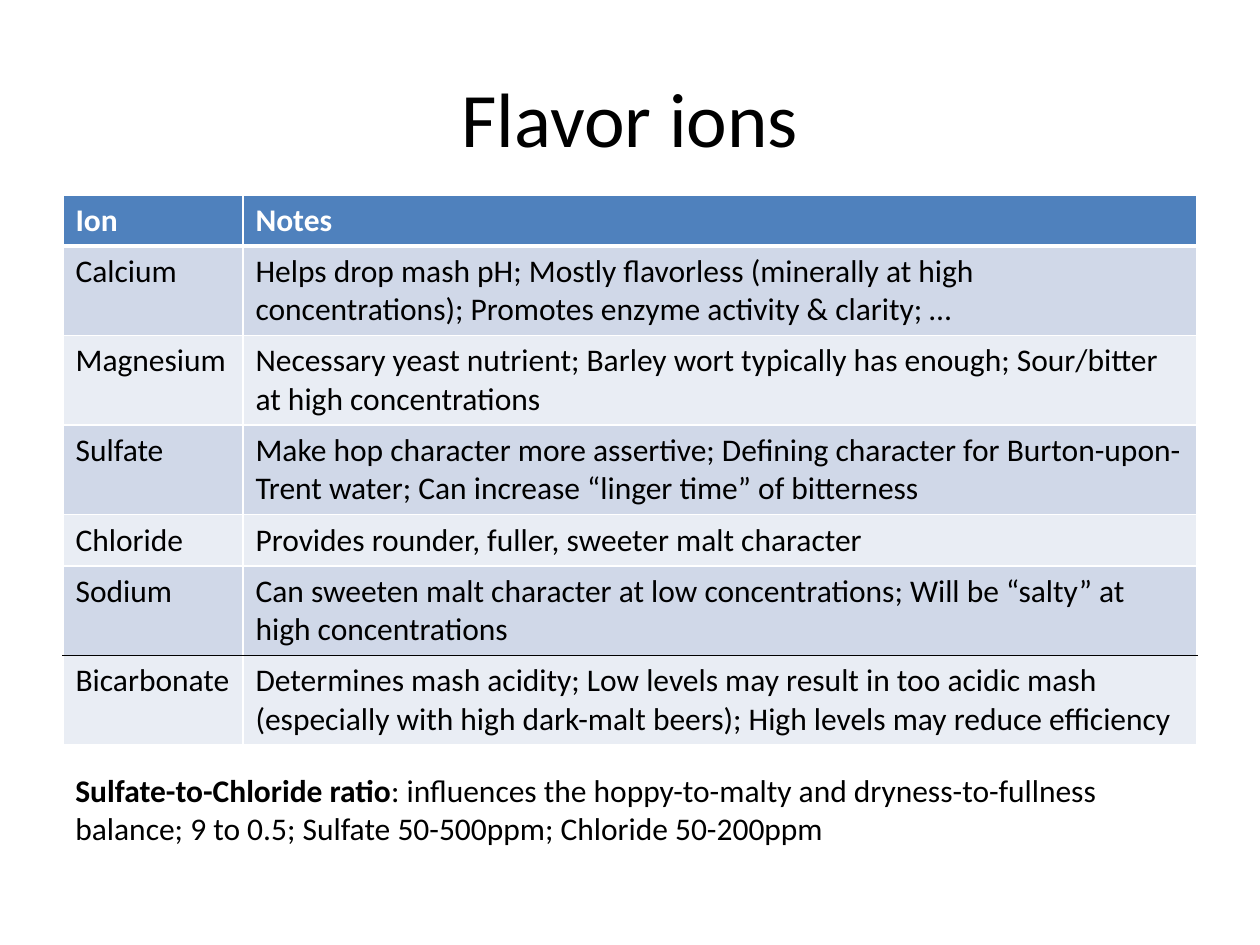
from dataclasses import dataclass

from lxml.etree import SubElement
from pptx import Presentation
from pptx.dml.color import RGBColor
from pptx.enum.text import MSO_ANCHOR as Anchor, MSO_AUTO_SIZE as AutoSize, PP_ALIGN as Align
from pptx.oxml.ns import qn
from pptx.util import Emu, Pt

PX_PER_INCH = 126


@dataclass(frozen=True)
class Theme:
    font: str = "Calibri"
    title_size: int = 44
    body_size: int = 18
    text: str = "000000"
    header_text: str = "FFFFFF"
    header_fill: str = "4F81BD"
    bands: tuple[str, str] = ("D0D8E8", "E9EDF4")
    border: str = "FFFFFF"
    divider: str = "000000"


@dataclass(frozen=True)
class Box:
    left: int
    top: int
    width: int
    height: int

    def emu(self) -> tuple[Emu, ...]:
        return tuple(px(n) for n in (self.left, self.top, self.width, self.height))


@dataclass(frozen=True)
class Ion:
    name: str
    notes: str
    lines: int = 2


THEME = Theme()
TITLE_BOX = Box(63, 38, 1134, 157)
TABLE_BOX = Box(63, 195, 1134, 549)
RATIO_BOX = Box(63, 765, 1134, 89)
COLUMN_WIDTHS = (180, 954)
ROW_HEIGHTS = {1: 51, 2: 89}
DIVIDER_ABOVE = "Bicarbonate"

IONS = (
    Ion("Ion", "Notes", 1),
    Ion("Calcium", "Helps drop mash pH; Mostly flavorless (minerally at high concentrations); "
        "Promotes enzyme activity & clarity; …"),
    Ion("Magnesium", "Necessary yeast nutrient; Barley wort typically has enough; "
        "Sour/bitter at high concentrations"),
    Ion("Sulfate", "Make hop character more assertive; Defining character for "
        "Burton-upon-Trent water; Can increase “linger time” of bitterness"),
    Ion("Chloride", "Provides rounder, fuller, sweeter malt character", 1),
    Ion("Sodium", "Can sweeten malt character at low concentrations; "
        "Will be “salty” at high concentrations"),
    Ion("Bicarbonate", "Determines mash acidity; Low levels may result in too acidic mash "
        "(especially with high dark-malt beers); High levels may reduce efficiency"),
)


def px(length: int) -> Emu:
    return Emu(round(length * 914400 / PX_PER_INCH))


def format_run(run, size: int, color: str, bold: bool = False) -> None:
    run.font.name = THEME.font
    run.font.size = Pt(size)
    run.font.bold = bold
    run.font.color.rgb = RGBColor.from_string(color)


def add_border(cell, side: str, color: str, points: int) -> None:
    line = SubElement(cell._tc.get_or_add_tcPr(), qn(f"a:ln{side}"), w=str(Pt(points)))
    fill = SubElement(line, qn("a:solidFill"))
    SubElement(fill, qn("a:srgbClr"), val=color)


def fill_cell(cell, text: str, row: int) -> None:
    header = row == 0
    above_divider = row + 1 < len(IONS) and IONS[row + 1].name == DIVIDER_ABOVE
    below_divider = IONS[row].name == DIVIDER_ABOVE
    add_border(cell, "L", THEME.border, 1)
    add_border(cell, "R", THEME.border, 1)
    add_border(cell, "T", THEME.divider if below_divider else THEME.border, 3 if row == 1 else 1)
    add_border(cell, "B", THEME.divider if above_divider else THEME.border, 3 if header else 1)
    cell.fill.solid()
    fill = THEME.header_fill if header else THEME.bands[(row - 1) % 2]
    cell.fill.fore_color.rgb = RGBColor.from_string(fill)
    paragraph = cell.text_frame.paragraphs[0]
    paragraph.text = text
    color = THEME.header_text if header else THEME.text
    format_run(paragraph.runs[0], THEME.body_size, color, header)


def add_title(slide, text: str) -> None:
    title = slide.shapes.title
    title.left, title.top, title.width, title.height = TITLE_BOX.emu()
    title.text_frame.text = text
    title.text_frame.vertical_anchor = Anchor.MIDDLE
    paragraph = title.text_frame.paragraphs[0]
    paragraph.alignment = Align.CENTER
    format_run(paragraph.runs[0], THEME.title_size, THEME.text)


def add_ion_table(slide) -> None:
    table = slide.shapes.add_table(len(IONS), len(COLUMN_WIDTHS), *TABLE_BOX.emu()).table
    for column, width in zip(table.columns, COLUMN_WIDTHS):
        column.width = px(width)
    for index, ion in enumerate(IONS):
        table.rows[index].height = px(ROW_HEIGHTS[ion.lines])
        for column, text in enumerate((ion.name, ion.notes)):
            fill_cell(table.cell(index, column), text, index)


def add_ratio_note(slide, label: str, detail: str) -> None:
    text_frame = slide.shapes.add_textbox(*RATIO_BOX.emu()).text_frame
    text_frame.word_wrap = True
    text_frame.auto_size = AutoSize.SHAPE_TO_FIT_TEXT
    paragraph = text_frame.paragraphs[0]
    for text, bold in ((label, True), (detail, False)):
        run = paragraph.add_run()
        run.text = text
        format_run(run, THEME.body_size, THEME.text, bold)


def main() -> None:
    presentation = Presentation()
    presentation.slide_width, presentation.slide_height = px(1260), px(945)
    slide = presentation.slides.add_slide(presentation.slide_layouts.get_by_name("Title Only"))
    add_title(slide, "Flavor ions")
    add_ion_table(slide)
    add_ratio_note(
        slide,
        "Sulfate-to-Chloride ratio",
        ": influences the hoppy-to-malty and dryness-to-fullness balance; "
        "9 to 0.5; Sulfate 50-500ppm; Chloride 50-200ppm",
    )
    presentation.save("out.pptx")


if __name__ == "__main__":
    main()
